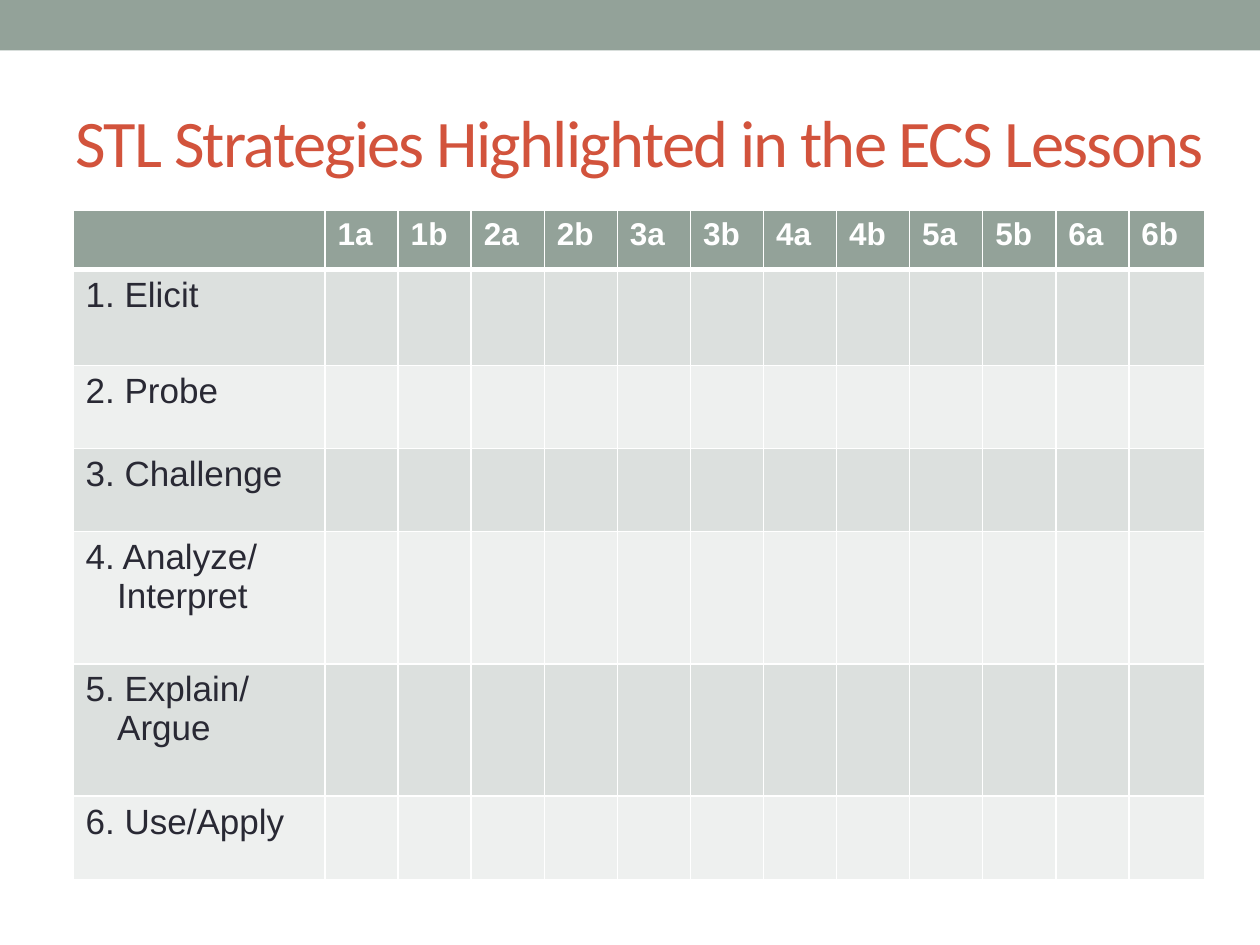
from lxml.etree import SubElement
from pptx import Presentation
from pptx.dml.color import RGBColor
from pptx.enum.shapes import MSO_SHAPE
from pptx.enum.text import MSO_ANCHOR
from pptx.oxml.ns import qn
from pptx.util import Inches, Pt

SAGE, RUST, INK, WHITE = "93A299", "D2533C", "292934", "FFFFFF"
BANDS = ["DCE0DE", "EEF0EF"]
LESSONS = [f"{n}{part}" for n in range(1, 7) for part in "ab"]
STRATEGIES = ["1. Elicit", "2. Probe", "3. Challenge", "4. Analyze/ Interpret",
              "5. Explain/ Argue", "6. Use/Apply"]
COL_WIDTHS = [2] + [0.58] * 11 + [0.6]
ROW_HEIGHTS = [0.47, 0.76, 0.66, 0.66, 1.05, 1.05, 0.66]


def rgb(value):
    return RGBColor.from_string(value)


def add_borders(cell, top, bottom):
    """Draw white cell borders; top and bottom are widths in points."""
    tcPr = cell._tc.get_or_add_tcPr()
    for side, width in (("L", 1), ("R", 1), ("T", top), ("B", bottom)):
        ln = SubElement(tcPr, qn(f"a:ln{side}"), w=str(Pt(width)))
        fill = SubElement(ln, qn("a:solidFill"))
        SubElement(fill, qn("a:srgbClr"), val=WHITE)


prs = Presentation()
prs.slide_width, prs.slide_height = Inches(10), Inches(7.5)
s = prs.slides.add_slide(prs.slide_layouts[6])

# Top band
band = s.shapes.add_shape(MSO_SHAPE.RECTANGLE, 0, 0, Inches(10), Inches(0.4))
band.shadow.inherit = False
band.fill.solid()
band.fill.fore_color.rgb = rgb(SAGE)
band.line.fill.background()

# Title
title = s.shapes.add_textbox(Inches(0.5), Inches(0.58), Inches(9.17), Inches(1.08))
tf = title.text_frame
tf.word_wrap = True
tf.vertical_anchor = MSO_ANCHOR.MIDDLE
tf.margin_right = 0
tf.text = "STL Strategies Highlighted in the ECS Lessons"
r = tf.paragraphs[0].runs[0]
r.font.name, r.font.size = "Calibri", Pt(38)
r.font.color.rgb = rgb(RUST)
r.font._element.set("spc", "-100")

# Strategy by lesson table
frame = s.shapes.add_table(len(ROW_HEIGHTS), len(COL_WIDTHS), Inches(0.58), Inches(1.67),
                           Inches(sum(COL_WIDTHS)), Inches(sum(ROW_HEIGHTS)))
table = frame.table
for column, width in zip(table.columns, COL_WIDTHS):
    column.width = Inches(width)
for row, height in zip(table.rows, ROW_HEIGHTS):
    row.height = Inches(height)

rows = [[""] + LESSONS] + [[name] + [""] * len(LESSONS) for name in STRATEGIES]
for i, texts in enumerate(rows):
    header = i == 0
    for j, text in enumerate(texts):
        cell = table.cell(i, j)
        add_borders(cell, top=3 if i == 1 else 1, bottom=3 if header else 1)
        cell.fill.solid()
        cell.fill.fore_color.rgb = rgb(SAGE if header else BANDS[(i - 1) % 2])
        if not text:
            continue
        cell.text_frame.text = text
        p = cell.text_frame.paragraphs[0]
        if not header:
            p.space_after = Pt(12 if i == 1 else 6)
            pPr = p._p.get_or_add_pPr()
            pPr.set("marL", str(Inches(0.25)))
            pPr.set("indent", str(Inches(-0.25)))
        font = p.runs[0].font
        font.name, font.size, font.bold = "Arial", Pt(18 if header else 20), header
        font.color.rgb = rgb(WHITE if header else INK)

prs.save("out.pptx")
